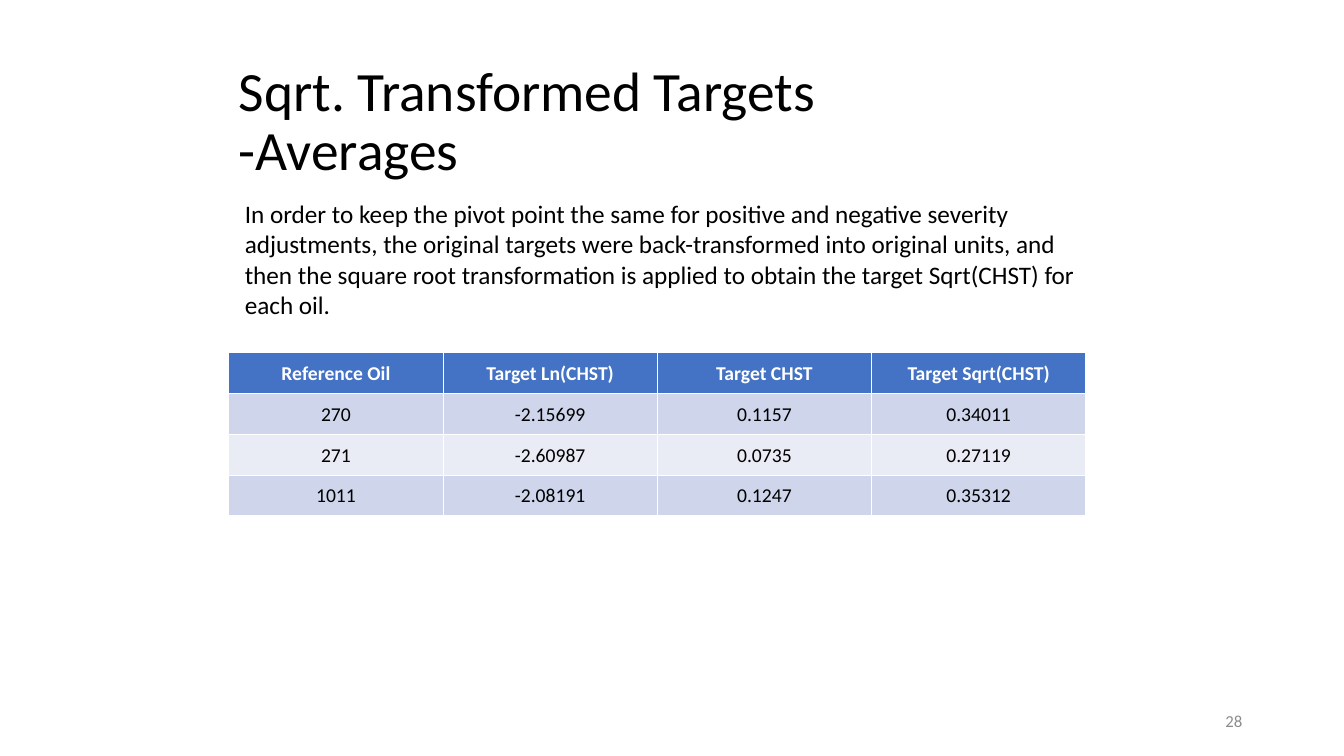
from pptx import Presentation
from pptx.dml.color import RGBColor
from pptx.enum import text as t
from pptx.util import Inches, Pt

COLORS = {"ink": "000000", "number": "8C8C8C", "header": "4472C4",
          "header_ink": "FFFFFF", "odd": "CFD5EA", "even": "E9EBF5"}

TARGETS = [
    ["Reference Oil", "Target Ln(CHST)", "Target CHST", "Target Sqrt(CHST)"],
    ["270", "-2.15699", "0.1157", "0.34011"],
    ["271", "-2.60987", "0.0735", "0.27119"],
    ["1011", "-2.08191", "0.1247", "0.35312"],
]
EXPLANATION = (
    "In order to keep the pivot point the same for positive and negative severity "
    "adjustments, the original targets were back-transformed into original units, and "
    "then the square root transformation is applied to obtain the target Sqrt(CHST) for "
    "each oil."
)
CELL_FORMAT = {"vertical_anchor": t.MSO_ANCHOR.MIDDLE,
               "margin_left": Inches(0.01), "margin_right": Inches(0.01),
               "margin_top": Inches(0.01), "margin_bottom": 0}


def apply_format(target, values):
    for name, value in values.items():
        setattr(target, name, value)


def write(paragraph, words, size, color, bold=False, **layout):
    paragraph.text = words
    apply_format(paragraph, layout)
    apply_format(paragraph.font, {"name": "Calibri", "size": Pt(size), "bold": bold})
    paragraph.font.color.rgb = RGBColor.from_string(COLORS[color])


def add_passage(slide, box, words, size, color="ink",
                anchor=t.MSO_ANCHOR.MIDDLE, **layout):
    frame = slide.shapes.add_textbox(*map(Inches, box)).text_frame
    apply_format(frame, {"word_wrap": True, "vertical_anchor": anchor})
    write(frame.paragraphs[0], words, size, color, **layout)


def add_targets(slide, box):
    # The default table style supplies the white rules between cells
    table = slide.shapes.add_table(len(TARGETS), len(TARGETS[0]),
                                   *map(Inches, box)).table
    for r, values in enumerate(TARGETS):
        heading = r == 0
        fill = "header" if heading else "odd" if r % 2 else "even"
        for c, value in enumerate(values):
            cell = table.cell(r, c)
            apply_format(cell, CELL_FORMAT)
            cell.fill.solid()
            cell.fill.fore_color.rgb = RGBColor.from_string(COLORS[fill])
            write(cell.text_frame.paragraphs[0], value, 14,
                  "header_ink" if heading else "ink", heading,
                  alignment=t.PP_ALIGN.CENTER)


def main():
    deck = Presentation()
    deck.slide_width, deck.slide_height = Inches(13.33), Inches(7.5)
    slide = deck.slides.add_slide(deck.slide_layouts[6])

    # Title
    add_passage(slide, (2.27, 0.83, 8.5, 0.78),
                "Sqrt. Transformed Targets\v-Averages", 39.6, line_spacing=0.9)
    # Explanation
    add_passage(slide, (2.33, 1.92, 8.44, 1.31), EXPLANATION, 18,
                anchor=t.MSO_ANCHOR.TOP)
    # Table of targets
    add_targets(slide, (2.27, 3.5, 8.5, 1.62))
    # Slide number
    add_passage(slide, (9.42, 6.95, 3, 0.4), "28", 12, "number",
                alignment=t.PP_ALIGN.RIGHT)

    deck.save("out.pptx")


if __name__ == "__main__":
    main()
